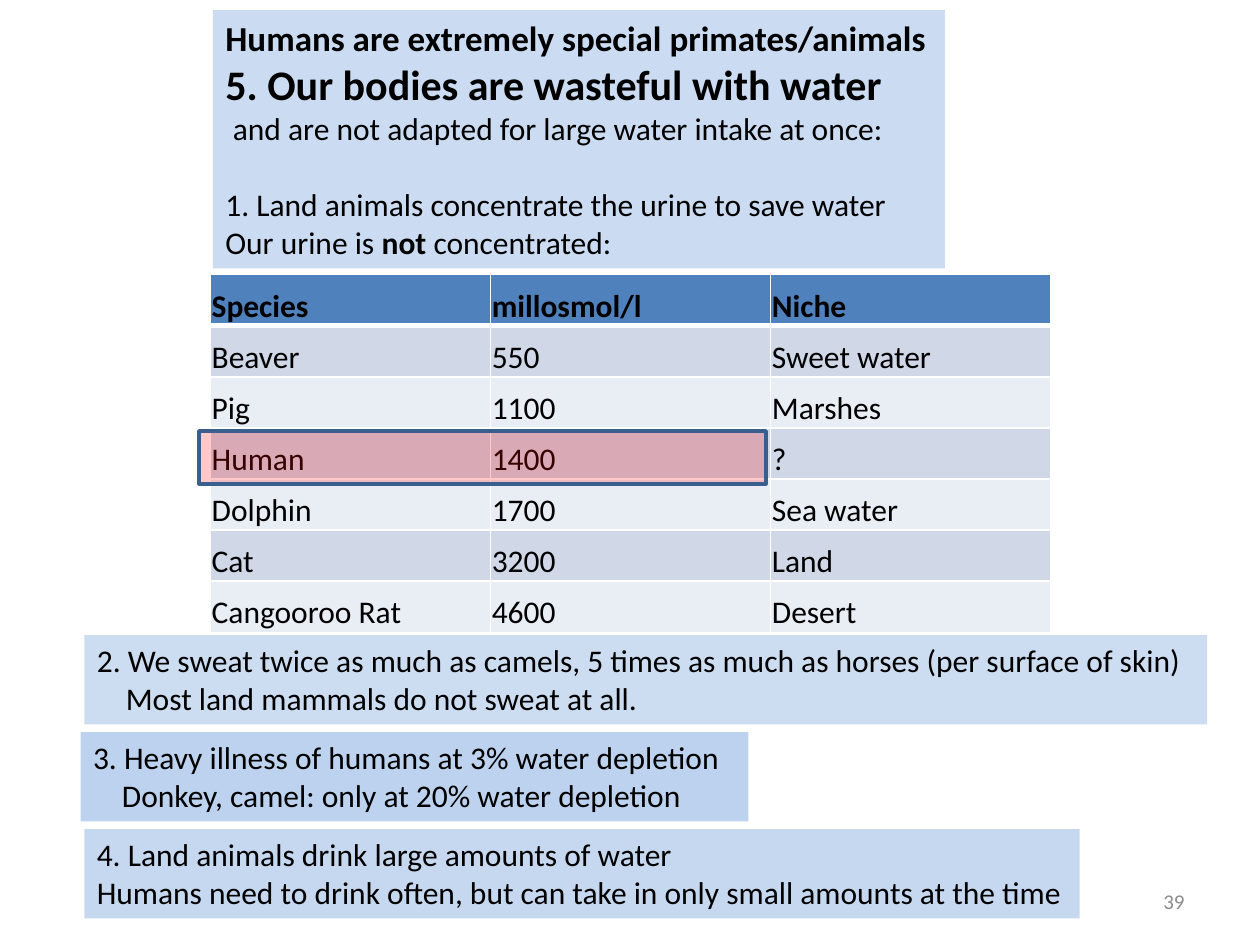
from lxml import etree
from pptx import Presentation
from pptx import util as u
from pptx.dml.color import RGBColor
from pptx.enum import shapes, text
from pptx.oxml import ns

HUES = {"ink": "000000", "note": "8EB4E3", "head": "4F81BD", "odd": "D0D8E8",
        "even": "E9EDF4", "rule": "FFFFFF", "mark": "FF0000", "edge": "3A5F8C",
        "page": "8C8C8C"}
FACE = "Calibri"
ROWS = [("Species", "millosmol/l", "Niche"),
        ("Beaver", "550", "Sweet water"),
        ("Pig", "1100", "Marshes"),
        ("Human", "1400", "?"),
        ("Dolphin", "1700", "Sea water"),
        ("Cat", "3200", "Land"),
        ("Cangooroo Rat", "4600", "Desert")]


def hue(name):
    return RGBColor.from_string(HUES[name])


def style(font, size=18, bold=False, color="ink"):
    font.name, font.size, font.bold = FACE, u.Pt(size), bold
    font.color.rgb = hue(color)


def paint(shape, color, alpha):
    """Fill a shape with a see-through colour, alpha in percent."""
    shape.shadow.inherit = False
    shape.fill.solid()
    shape.fill.fore_color.rgb = hue(color)
    tint = shape.fill._xPr.find(".//" + ns.qn("a:srgbClr"))
    etree.SubElement(tint, ns.qn("a:alpha"), val=str(alpha * 1000))


def indent(para, inch):
    para._p.get_or_add_pPr().set("marL", str(u.Inches(inch)))


def note(slide, box, alpha, lines):
    """Tinted text box; returns its paragraphs."""
    shape = slide.shapes.add_textbox(*map(u.Inches, box))
    paint(shape, "note", alpha)
    frame = shape.text_frame
    frame.word_wrap = True
    frame.text = "\n".join(lines)
    for para in frame.paragraphs:
        for run in para.runs:
            style(run.font)
    return frame.paragraphs


def intro(slide, box):
    paras = note(slide, box, 46, [
        "Humans are extremely special primates/animals",
        "5. Our bodies are wasteful with water",
        "and are not adapted for large water intake at once:",
        "1. Land animals concentrate the urine to save water",
        "Our urine is "])
    style(paras[0].runs[0].font, 20, True)
    style(paras[1].runs[0].font, 24, True)
    indent(paras[2], 0.06)
    paras[3].space_before = u.Pt(22)
    for word, bold in (("not", True), (" concentrated:", False)):
        run = paras[4].add_run()
        run.text = word
        style(run.font, bold=bold)


def border(cell, side, width):
    line = etree.SubElement(cell._tc.get_or_add_tcPr(), ns.qn("a:" + side),
                            w=str(u.Pt(width)))
    fill = etree.SubElement(line, ns.qn("a:solidFill"))
    etree.SubElement(fill, ns.qn("a:srgbClr"), val=HUES["rule"])


def grid(slide, box):
    table = slide.shapes.add_table(len(ROWS), len(ROWS[0]),
                                   *map(u.Inches, box)).table
    for r, row in enumerate(ROWS):
        for c, word in enumerate(row):
            cell = table.cell(r, c)
            cell.text = word
            style(cell.text_frame.paragraphs[0].runs[0].font, bold=r == 0)
            cell.vertical_anchor = text.MSO_ANCHOR.BOTTOM
            cell.margin_left = cell.margin_right = u.Inches(0.01)
            cell.margin_top, cell.margin_bottom = u.Inches(0.01), 0
            # Borders come before the fill in the cell properties
            for side in ("lnL", "lnR", "lnT", "lnB"):
                thick = (r, side) in ((0, "lnB"), (1, "lnT"))
                border(cell, side, 3 if thick else 1)
            cell.fill.solid()
            cell.fill.fore_color.rgb = hue(
                "head" if r == 0 else "odd" if r % 2 else "even")


def mark(slide, box):
    shape = slide.shapes.add_shape(shapes.MSO_SHAPE.RECTANGLE,
                                   *map(u.Inches, box))
    paint(shape, "mark", 21)
    shape.line.color.rgb = hue("edge")
    shape.line.width = u.Pt(2)


def number(slide, box):
    frame = slide.shapes.add_textbox(*map(u.Inches, box)).text_frame
    frame.word_wrap = True
    frame.vertical_anchor = text.MSO_ANCHOR.MIDDLE
    frame.text = "39"
    para = frame.paragraphs[0]
    para.alignment = text.PP_ALIGN.RIGHT
    style(para.runs[0].font, 12, color="page")


def main():
    deck = Presentation()
    deck.slide_width, deck.slide_height = u.Inches(10), u.Inches(7.5)
    slide = deck.slides.add_slide(deck.slide_layouts[6])

    # Heading and first point
    intro(slide, (1.69, 0.08, 5.81, 2.05))

    # Further points
    third = note(slide, (0.64, 5.81, 5.3, 0.71), 59, [
        "3. Heavy illness of humans at 3% water depletion",
        "Donkey, camel: only at 20% water depletion"])
    note(slide, (0.67, 6.58, 7.9, 0.71), 51, [
        "4. Land animals drink large amounts of water",
        "Humans need to drink often, but can take in only small amounts"
        " at the time"])
    second = note(slide, (0.67, 5.04, 8.91, 0.71), 45, [
        "2. We sweat twice as much as camels, 5 times as much as horses"
        " (per surface of skin)",
        "Most land mammals do not sweat at all."])
    for paras in (second, third):
        indent(paras[1], 0.23)

    # Urine table, page number and the marked human row
    grid(slide, (1.67, 2.18, 6.67, 2.84))
    number(slide, (7.17, 6.95, 2.33, 0.4))
    mark(slide, (1.58, 3.42, 4.5, 0.42))

    deck.save("out.pptx")


if __name__ == "__main__":
    main()
